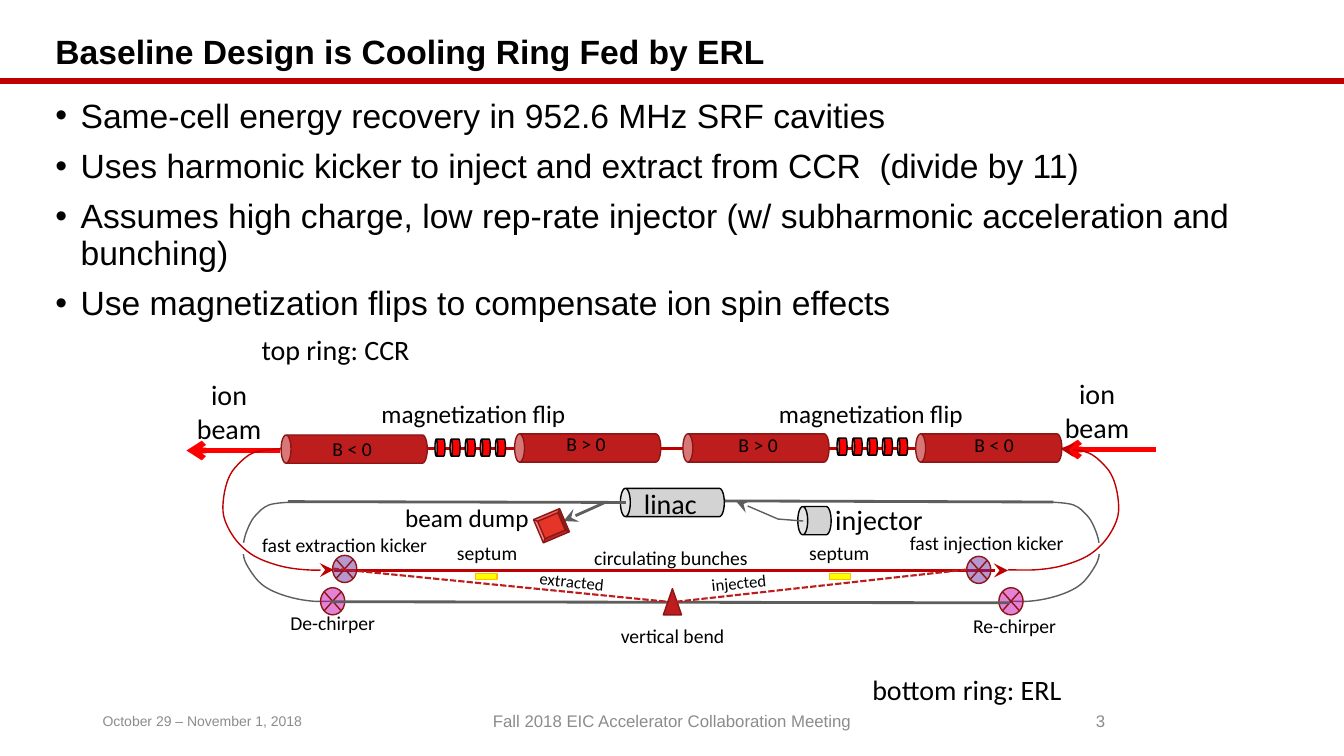
from pptx import Presentation
from pptx.dml.color import RGBColor
from pptx.enum.dml import MSO_LINE
from pptx.enum.shapes import MSO_CONNECTOR, MSO_SHAPE
from pptx.enum.text import MSO_ANCHOR, MSO_AUTO_SIZE, PP_ALIGN
from pptx.oxml.ns import qn
from pptx.util import Pt
from lxml import etree

CAN, RECTANGLE, BEVEL = MSO_SHAPE.CAN, MSO_SHAPE.RECTANGLE, MSO_SHAPE.BEVEL
TRIANGLE, JUNCTION = MSO_SHAPE.ISOSCELES_TRIANGLE, MSO_SHAPE.FLOWCHART_SUMMING_JUNCTION
STRAIGHT, DASH = MSO_CONNECTOR.STRAIGHT, MSO_LINE.SQUARE_DOT
LEFT, CENTER = PP_ALIGN.LEFT, PP_ALIGN.CENTER
TOP, MIDDLE = MSO_ANCHOR.TOP, MSO_ANCHOR.MIDDLE
FIXED, GROW = MSO_AUTO_SIZE.NONE, MSO_AUTO_SIZE.SHAPE_TO_FIT_TEXT

BLACK = RGBColor(0x00, 0x00, 0x00)
WHITE = RGBColor(0xFF, 0xFF, 0xFF)
FOOTER_GRAY = RGBColor(0x8C, 0x8C, 0x8C)
BEAM_GRAY = RGBColor(0x5E, 0x5E, 0x5E)
LIGHT_GRAY = RGBColor(0xD3, 0xD3, 0xD3)
CRIMSON = RGBColor(0xC0, 0x00, 0x00)
MAGNET_RED = RGBColor(0xBE, 0x1D, 0x1D)
DARK_RED = RGBColor(0x8D, 0x15, 0x15)
DUMP_RED = RGBColor(0xE4, 0x35, 0x28)
RED = RGBColor(0xFF, 0x00, 0x00)
PURPLE = RGBColor(0x70, 0x30, 0xA0)
MAGENTA = RGBColor(0xC8, 0x08, 0xAD)
YELLOW = RGBColor(0xFF, 0xFF, 0x00)
AMBER = RGBColor(0xFF, 0xC0, 0x00)

TITLE = "Baseline Design is Cooling Ring Fed by ERL"
BULLETS = [
    "Same-cell energy recovery in 952.6 MHz SRF cavities",
    "Uses harmonic kicker to inject and extract from CCR  (divide by 11)",
    "Assumes high charge, low rep-rate injector (w/ subharmonic acceleration and bunching)",
    "Use magnetization flips to compensate ion spin effects",
]
FOOTERS = [
    ("October 29 – November 1, 2018", 66.2, 216, 10, LEFT),
    ("Fall 2018 EIC Accelerator Collaboration Meeting", 318.2, 324, 12, CENTER),
    ("3", 678.2, 216, 12, CENTER),
]
LABELS = [
    ("ion beam", 739.4, 265.7, 88.5, 55.4, 20, 0),
    ("ion beam", 119.4, 266.4, 88.5, 55.4, 20, 0),
    ("magnetization flip", 253.2, 280.8, 169.9, 29.5, 18, 0),
    ("magnetization flip", 537.1, 280.8, 169.9, 29.5, 18, 0),
    ("top ring: CCR", 154.8, 234, 169.9, 31.7, 20, 0),
    ("bottom ring: ERL", 593.5, 476.6, 194.4, 31.7, 20, 0),
    ("injector", 583.2, 355.7, 89.3, 31.7, 20, 0),
    ("beam dump", 278.4, 355, 110.2, 28.8, 18, 0),
    ("linac", 434.2, 344.2, 89.3, 31.7, 20, 0),
    ("fast extraction kicker", 175.7, 377.3, 141.1, 23.8, 14, 0),
    ("fast injection kicker", 640.8, 375.5, 128.2, 24.5, 14, 0),
    ("De-chirper", 182.2, 432.7, 110.9, 24.5, 14, 0),
    ("Re-chirper", 669.4, 435.2, 110.9, 24.5, 14, 0),
    ("circulating bunches", 384.3, 386.6, 190.1, 23.8, 14, 0),
    ("extracted", 358.4, 404.4, 100.1, 21.6, 12, 5.9),
    ("injected", 432.7, 405.4, 190.1, 21.6, 12, 354.3),
    ("septum", 315.9, 383, 64.1, 24.5, 14, 0),
    ("septum", 567.4, 382.6, 64.1, 24.5, 14, 0),
    ("vertical bend", 432.5, 442.1, 95.8, 24.5, 14, 0),
]
MAGNETS = [("B < 0", 242.9, 268.6, 230.4, 308.2), ("B > 0", 409.7, 267.8, 397.4, 305.3),
           ("B > 0", 529.9, 267.8, 520.4, 306), ("B < 0", 696.2, 267.8, 689, 306)]
ERL_ARC = [(751, 358.6), (766.8, 360.7), (776.2, 367.9), (781.2, 375.8), (784.8, 386.6),
           (784.8, 398.2), (779.8, 408.2), (772.6, 416.9), (763.2, 422.6), (750.2, 427),
           (735.8, 429.4), (720.7, 429.4)]
CCR_ARC = [(757.4, 320.4), (776.9, 323.3), (788.4, 331.9), (794.9, 341.3), (798.5, 355),
           (798.5, 368.6), (792.7, 381.6), (784.1, 391.7), (773.3, 398.9), (756.7, 404.6),
           (739.4, 407), (720, 407)]


def write(paragraph, text, size, font_name, color=BLACK, bold=False):
    """Add one formatted run to a paragraph."""
    run = paragraph.add_run()
    run.text = text
    run.font.name, run.font.size, run.font.bold = font_name, Pt(size), bold
    run.font.color.rgb = color


def place(shape, left, top, width, height):
    """Set the frame of a shape in points."""
    shape.left, shape.top, shape.width, shape.height = Pt(left), Pt(top), Pt(width), Pt(height)


def add_label(slide, text, left, top, width, height, size, rotation=0, font_name="Calibri",
              color=BLACK, align=CENTER, wrap=True, anchor=TOP, fit=GROW):
    """Add a text box with one line of wording."""
    box = slide.shapes.add_textbox(Pt(left), Pt(top), Pt(width), Pt(height))
    box.rotation = rotation
    frame = box.text_frame
    frame.word_wrap, frame.auto_size, frame.vertical_anchor = wrap, fit, anchor
    frame.paragraphs[0].alignment = align
    write(frame.paragraphs[0], text, size, font_name, color)


def set_arrowhead(shape, end, kind):
    """Put an arrowhead on the headEnd or tailEnd of a line."""
    if end:
        head = etree.SubElement(shape.line._get_or_add_ln(), qn("a:" + end))
        head.set("type", kind)
        if kind == "stealth":
            head.set("w", "lg")
            head.set("len", "lg")


def add_line(slide, start, finish, color, width, arrow=None, dash=None):
    """Add a straight line, optionally dashed or with an arrow at its finish."""
    line = slide.shapes.add_connector(STRAIGHT, *map(Pt, start + finish))
    line.line.color.rgb, line.line.width = color, Pt(width)
    if dash:
        line.line.dash_style = dash
    set_arrowhead(line, arrow and "tailEnd", arrow)
    etree.SubElement(line._element.spPr, qn("a:effectLst"))


def add_part(slide, kind, left, top, width, height, fill, outline=None, rotation=0,
             depth=None, opacity=None):
    """Add a preset shape for one beamline part."""
    shape = slide.shapes.add_shape(kind, Pt(left), Pt(top), Pt(width), Pt(height))
    shape.shadow.inherit = False
    shape.rotation = rotation
    shape.fill.solid()
    shape.fill.fore_color.rgb = fill
    if outline is None:
        shape.line.fill.background()
    else:
        shape.line.color.rgb, shape.line.width = outline, Pt(1)
    if depth:
        shape.adjustments[0] = depth
    if opacity:
        color = shape._element.spPr.find(qn("a:solidFill"))[0]
        etree.SubElement(color, qn("a:alpha")).set("val", str(opacity * 1000))


def round_corners(track):
    """Turn the straight segments of an outline into one smooth curve."""
    element = track._element
    knots = [(int(p.get("x")), int(p.get("y"))) for p in element.iter(qn("a:pt"))]
    padded = [knots[0]] + knots + [knots[-1]]
    segments = list(element.iter(qn("a:lnTo")))
    for segment, *corners in zip(segments, padded, padded[1:], padded[2:], padded[3:]):
        before, start, finish, after = corners
        leave = [b + (c - a) / 6 for a, b, c in zip(before, start, finish)]
        arrive = [b - (c - a) / 6 for a, b, c in zip(start, finish, after)]
        curve = etree.Element(qn("a:cubicBezTo"))
        for x, y in (leave, arrive, finish):
            etree.SubElement(curve, qn("a:pt"), x=str(round(x)), y=str(round(y)))
        segment.getparent().replace(segment, curve)


def mirror(points, total):
    """Reflect points left to right; total is the sum of paired x values."""
    return [(total - x, y) for x, y in points]


def add_track(slide, points, color, end=None, curved=True):
    """Add an open thin outline through the points."""
    corners = [(Pt(x), Pt(y)) for x, y in points]
    builder = slide.shapes.build_freeform(*corners[0], scale=1.0)
    builder.add_line_segments(corners[1:], close=False)
    track = builder.convert_to_shape()
    if curved:
        round_corners(track)
    track.shadow.inherit = False
    track.fill.background()
    track.line.color.rgb, track.line.width = color, Pt(1)
    set_arrowhead(track, end, "stealth")


def add_outline_text(slide):
    """Fill the title and body placeholders."""
    title, body = slide.shapes.title, slide.placeholders[1]
    place(title, 32.4, 19.1, 888.5, 38.2)
    place(body, 32.4, 67.3, 904.3, 171.4)
    title.text_frame.auto_size = body.text_frame.auto_size = FIXED
    title.text_frame.vertical_anchor, body.text_frame.vertical_anchor = MIDDLE, TOP
    heading = title.text_frame.paragraphs[0]
    heading.alignment, heading.line_spacing = LEFT, 0.9
    write(heading, TITLE, 24, "Arial", bold=True)
    for index, text in enumerate(BULLETS):
        frame = body.text_frame
        paragraph = frame.add_paragraph() if index else frame.paragraphs[0]
        paragraph.line_spacing, paragraph.space_before = 0.9, Pt(10 if index else 0)
        properties = paragraph._p.get_or_add_pPr()
        properties.set("marL", str(Pt(18)))
        properties.set("indent", str(Pt(-18)))
        write(paragraph, text, 24, "Arial")


def add_rings(slide):
    """Draw the two rings with their magnets, kickers and beams."""
    add_part(slide, CAN, 571.7, 360, 20.2, 23.8, LIGHT_GRAY, BLACK, 270, 0.35)
    add_line(slide, (233.3, 320.4), (681.1, 320.4), CRIMSON, 2)
    for track in (ERL_ARC, mirror(ERL_ARC, 959)):
        add_track(slide, track, BEAM_GRAY)
    for left in (169.9, 779.8):
        add_part(slide, RECTANGLE, left, 387.7, 7.2, 7.9, WHITE)
    for left, top in ((308.2, 316.1), (595.4, 315.4)):
        for index in range(5):
            add_part(slide, CAN, left + 10.8 * index, top, 12.2, 7.2, RED, BLACK, 270)
    add_part(slide, CAN, 470.2, 321.8, 20.2, 74.2, LIGHT_GRAY, BLACK, 270, 0.35)
    add_line(slide, (205.9, 358.3), (447.1, 358.9), BEAM_GRAY, 2)
    add_line(slide, (517.7, 357.8), (752.4, 358.6), BEAM_GRAY, 2)
    injection = [(525.6, 357.8), (555.8, 370.8), (573.8, 372.2)]
    add_track(slide, injection, BEAM_GRAY, "headEnd", curved=False)
    add_line(slide, (431.3, 359.3), (402.5, 372.2), BEAM_GRAY, 2, "stealth")
    add_part(slide, BEVEL, 383.8, 366.5, 20.2, 18, DUMP_RED, DARK_RED, 337)
    add_line(slide, (825.8, 321.1), (758.9, 321.1), RED, 4, "arrow")
    add_line(slide, (200.2, 321.8), (133.2, 321.8), RED, 4, "arrow")
    add_line(slide, (238.3, 407.5), (720, 407.5), CRIMSON, 2, "stealth")
    for left, top, color in ((237.6, 396.7, PURPLE), (690.5, 397.4, PURPLE),
                             (713.5, 419.8, MAGENTA), (229, 419.8, MAGENTA)):
        add_part(slide, JUNCTION, left, top, 17.3, 19.4, color, DARK_RED, opacity=50)
    for left in (339.8, 592.6):
        add_part(slide, RECTANGLE, left, 409.7, 15.1, 4.3, YELLOW, AMBER)
    add_track(slide, CCR_ARC, CRIMSON, "headEnd")
    add_track(slide, mirror(CCR_ARC, 958.3), CRIMSON, "tailEnd")
    add_line(slide, (236.2, 429.8), (721.4, 430.6), BEAM_GRAY, 2)
    add_part(slide, TRIANGLE, 473.8, 420.5, 13, 18.7, MAGNET_RED, DARK_RED)
    for text, left, top, label_left, label_top in MAGNETS:
        add_part(slide, CAN, left, top, 20.2, 104.4, MAGNET_RED, DARK_RED, 270, 0.35)
        add_label(slide, text, label_left, label_top, 42.5, 24.5, 14, align=LEFT, wrap=False)
    add_line(slide, (237.6, 406.1), (476.6, 429.8), MAGNET_RED, 1.5, dash=DASH)
    add_line(slide, (483.1, 429.8), (690.5, 406.8), MAGNET_RED, 1.5, dash=DASH)


def main():
    """Build and save the slide."""
    presentation = Presentation()
    presentation.slide_width, presentation.slide_height = Pt(960), Pt(540)
    slide = presentation.slides.add_slide(presentation.slide_layouts[1])
    add_line(slide, (-1.4, 57.9), (960, 57.9), CRIMSON, 4.5)
    add_outline_text(slide)
    for text, left, width, size, align in FOOTERS:
        add_label(slide, text, left, 500.4, width, 28.8, size, font_name="Arial",
                  color=FOOTER_GRAY, align=align, anchor=MIDDLE, fit=FIXED)
    add_rings(slide)
    for label in LABELS:
        add_label(slide, *label)
    presentation.save("out.pptx")


if __name__ == "__main__":
    main()
